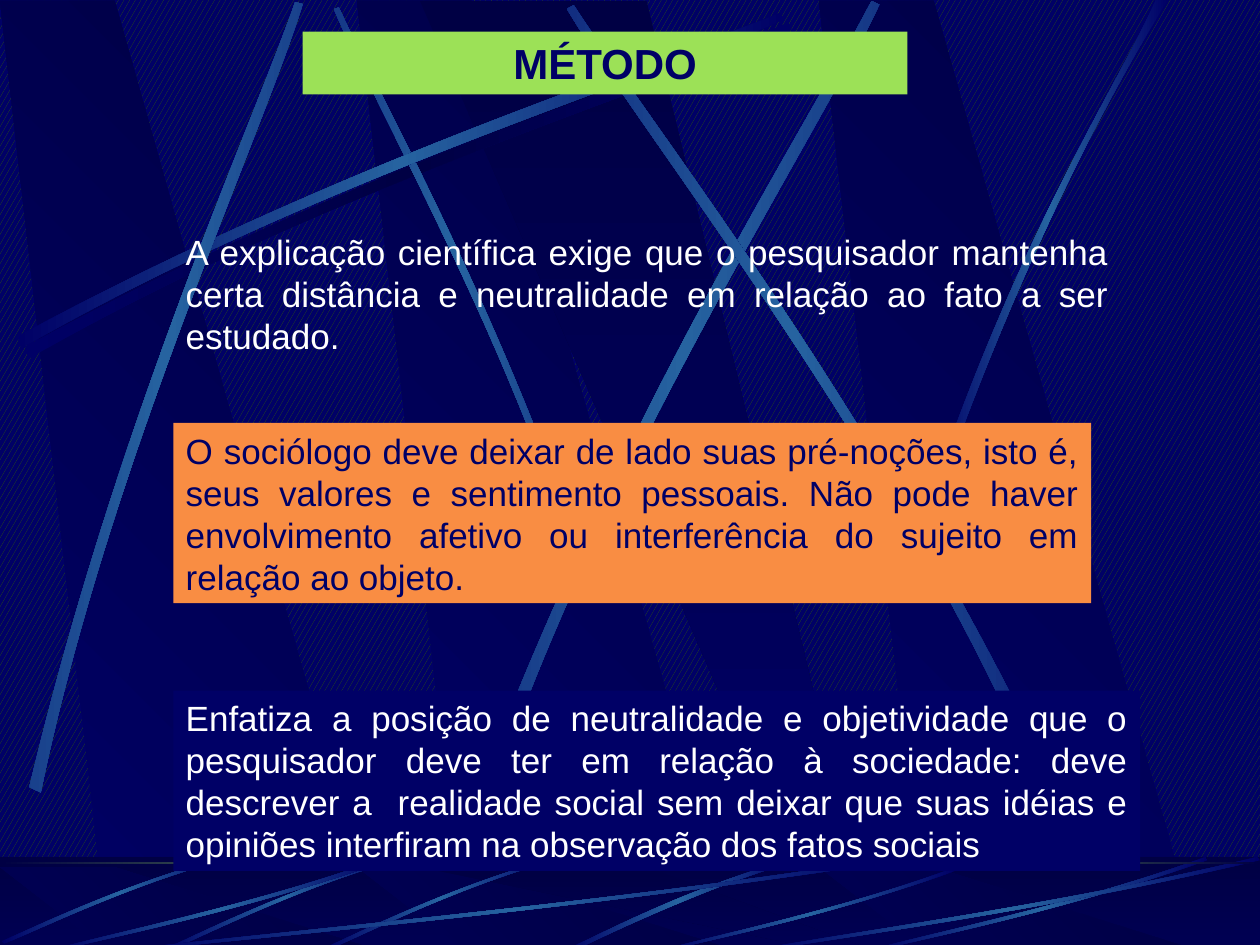
from lxml.etree import SubElement
from pptx import Presentation
from pptx.dml.color import RGBColor
from pptx.enum.dml import MSO_PATTERN
from pptx.enum.shapes import MSO_SHAPE
from pptx.enum.text import MSO_ANCHOR, MSO_AUTO_SIZE, PP_ALIGN
from pptx.oxml.ns import qn
from pptx.util import Pt

HEX = {"navy": "000066", "night": "000044", "blue": "2663A0", "green": "9CE157",
       "orange": "F98D43", "white": "FFFFFF", "moss": "2D5513"}
GLOW = ("navy", "blue", "navy")
SHADE = ("navy", "night", "navy")

# Ribbons: base size, then two edges of four Bezier points each
BEAM = (438, 192, [(0, 185), (190, 83), (363, 30), (436, 0)],
        [(438, 4), (366, 37), (168, 96), (2, 192)])
VINE = (136, 286, [(0, 284), (55, 125), (108, 48), (129, 0)],
        [(136, 0), (71, 104), (22, 232), (4, 286)])
SHOOT = (130, 53, [(129, 0), (64, 19), (21, 43), (0, 52)],
         [(4, 53), (30, 40), (89, 13), (130, 2)])
TWIG = (132, 60, [(132, 58), (75, 26), (23, 9), (0, 0)],
        [(0, 2), (22, 11), (81, 30), (132, 60)])
RAY = (192, 54, [(192, 2), (109, 31), (33, 46), (1, 54)],
       [(0, 53), (32, 44), (118, 27), (191, 0)])

# Kind, box, turn, mirrored, colours
UPPER = [
    (BEAM, (14.4, 13, 438, 192), 0, False, SHADE),
    (BEAM, (101.5, 97.2, 318, 126), 45, True, GLOW),
    (BEAM, (10, 7.2, 438, 192), 0, False, GLOW),
    (BEAM, (-123, 131, 438, 192), 311.7, False, GLOW),
    (BEAM, (166.3, 115.2, 449.3, 216.7), 321.6, False, GLOW),
    (BEAM, (232.6, 109.4, 438, 192), 34.7, True, GLOW),
    (VINE, (531.4, 0, 136, 286), 0, False, GLOW),
]
LOWER = [
    (SHOOT, (322.6, 491, 130, 53), 0, False, GLOW),
    (TWIG, (185.8, 486.7, 132.5, 59.8), 315, False, GLOW),
    (TWIG, (95.8, 486.7, 132.5, 59.8), 315, False, GLOW),
    (TWIG, (3.6, 483, 129.6, 61.2), 315, False, GLOW),
    (RAY, (72, 489.6, 444, 54), 0, False, GLOW),
    (RAY, (30, 489.6, 192, 54), 0, False, GLOW),
    (RAY, (379.4, 496, 166.3, 47.5), 0, False, GLOW),
    (RAY, (498, 489.6, 192, 54), 0, False, GLOW),
    (RAY, (432, 489.6, 288, 54), 0, False, GLOW),
]

# Text, box, fill, ink
NOTES = [
    ("A explicação científica exige que o pesquisador mantenha certa distância e "
     "neutralidade em relação ao fato a ser estudado.",
     (99, 128, 541.5, 79), None, "white"),
    ("O sociólogo deve deixar de lado suas pré-noções, isto é, seus valores e "
     "sentimento pessoais. Não pode haver envolvimento afetivo ou interferência do "
     "sujeito em relação ao objeto.",
     (99, 241.7, 524.5, 103), "orange", "navy"),
    ("Enfatiza a posição de neutralidade e objetividade que o pesquisador deve ter em "
     "relação à sociedade: deve descrever a  realidade social sem deixar que suas "
     "idéias e opiniões interfiram na observação dos fatos sociais",
     (99, 394.7, 552.5, 103), "navy", "white"),
]


def tint(name):
    return RGBColor.from_string(HEX[name])


def apply(item, values):
    for key, value in values.items():
        setattr(item, key, value)


def plain(shape):
    shape.shadow.inherit = False
    shape.line.fill.background()
    return shape


def paint(shape, name):
    shape.fill.solid()
    shape.fill.fore_color.rgb = tint(name)


def blend(shape, names, angle=0):
    """Fill with evenly spaced colour stops that do not turn with the shape."""
    shape.fill.gradient()
    grad = shape._element.spPr.find(qn("a:gradFill"))
    grad.set("rotWithShape", "0")
    stops = grad.find(qn("a:gsLst"))
    for old in list(stops):
        stops.remove(old)
    for i, name in enumerate(names):
        stop = SubElement(stops, qn("a:gs"), pos=str(100000 * i // (len(names) - 1)))
        SubElement(stop, qn("a:srgbClr"), val=HEX[name])
    grad.find(qn("a:lin")).set("ang", str(angle * 60000))


def outline(shapes, points):
    spots = [(Pt(x), Pt(y)) for x, y in points]
    pen = shapes.build_freeform(*spots[0], scale=1.0)
    pen.add_line_segments(spots[1:], close=True)
    return plain(pen.convert_to_shape())


def bend(shape):
    """Turn the two edges of an eight-point outline into Bezier curves."""
    lines = list(shape._element.iter(qn("a:lnTo")))
    for trio in (lines[:3], lines[4:7]):
        arc = trio[0].makeelement(qn("a:cubicBezTo"))
        trio[0].addprevious(arc)
        for line in trio:
            arc.append(line[0])
            line.getparent().remove(line)


def ribbon(shapes, kind, box, turn, flip, names):
    wide, high, out, back = kind
    left, top, width, height = box
    points = [(left + (wide - x if flip else x) * width / wide,
               top + y * height / high) for x, y in out + back]
    shape = outline(shapes, points)
    bend(shape)
    shape.rotation = turn
    blend(shape, names)


def slabs(shapes, top, bottom):
    """Three leaning panels and a wedge between two heights."""
    for x in (204, 0, 468):
        panel = outline(shapes, [(x + 62, bottom), (x + 217.5, bottom),
                                 (x + 65.5, top), (x, top)])
        blend(panel, ("navy", "night"), 315)
    wedge = outline(shapes, [(240, top), (474, bottom), (500, bottom), (369.5, top)])
    blend(wedge, ("night", "navy"), 90)


def block(shapes, box):
    return plain(shapes.add_shape(MSO_SHAPE.RECTANGLE, *map(Pt, box)))


def backdrop(shapes):
    # Upper wall
    slabs(shapes, 0.5, 541)
    for item in UPPER:
        ribbon(shapes, *item)
    # Floor with its veil
    floor = (0, 489.6, 720, 54)
    blend(block(shapes, floor), ("night", "navy"), 90)
    slabs(shapes, 495.5, 543.5)
    veil = block(shapes, floor)
    paint(veil, "night")
    color = veil._element.spPr.find(qn("a:solidFill"))[0]
    SubElement(color, qn("a:alpha"), val="50000")
    for item in LOWER:
        ribbon(shapes, *item)
    # Horizon line
    blend(block(shapes, (0, 492.5, 720, 1.5)), ("night", "green", "night"))


def settle(slide, master):
    """Move the drawn backdrop behind everything on the master."""
    tree = master.shapes._spTree
    drawn = [shape for shape in slide.shapes if not shape.is_placeholder]
    for i, shape in enumerate(drawn):
        shape._element.nvSpPr.cNvPr.set("id", str(100 + i))
        tree.insert(2 + i, shape._element)


def write(shape, text, ink, size, bold, align, anchor):
    frame = shape.text_frame
    frame.text = text
    apply(frame, {"word_wrap": True, "auto_size": MSO_AUTO_SIZE.NONE,
                  "vertical_anchor": anchor})
    para = frame.paragraphs[0]
    para.alignment = align
    apply(para.font, {"name": "Arial", "size": Pt(size), "bold": bold})
    para.font.color.rgb = tint(ink)


def note(shapes, text, box, fill, ink):
    shape = block(shapes, box) if fill else shapes.add_textbox(*map(Pt, box))
    if fill:
        paint(shape, fill)
    write(shape, text, ink, 20, False, PP_ALIGN.JUSTIFY, MSO_ANCHOR.TOP)


def head(shapes, box):
    title = shapes.title
    shapes._spTree.append(title._element)
    apply(title, dict(zip(("left", "top", "width", "height"), map(Pt, box))))
    paint(title, "green")
    write(title, "MÉTODO", "navy", 24, True, PP_ALIGN.CENTER, MSO_ANCHOR.MIDDLE)


def main():
    deck = Presentation()
    apply(deck, {"slide_width": Pt(720), "slide_height": Pt(540)})
    slide = deck.slides.add_slide(deck.slide_layouts[5])
    fill = slide.background.fill
    fill.patterned()
    fill.pattern = MSO_PATTERN.LARGE_CONFETTI
    fill.fore_color.rgb = tint("moss")
    fill.back_color.rgb = tint("navy")
    backdrop(slide.shapes)
    settle(slide, deck.slide_master)
    for item in NOTES:
        note(slide.shapes, *item)
    head(slide.shapes, (173, 18, 345.5, 36))
    deck.save("out.pptx")


if __name__ == "__main__":
    main()
